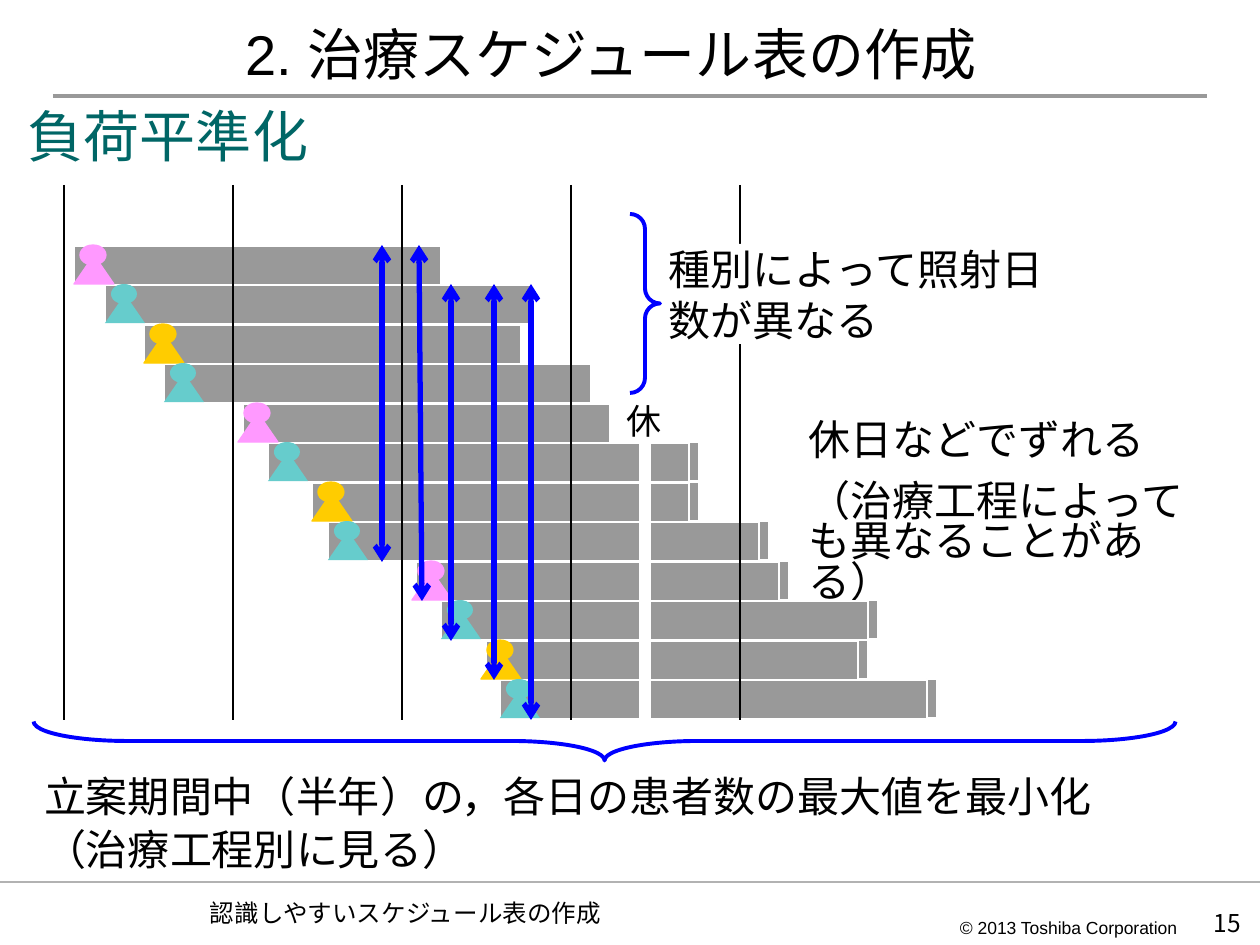
"""Build the treatment schedule slide on load levelling."""
from lxml import etree
from pptx import Presentation
from pptx.dml.color import RGBColor
from pptx.enum.shapes import MSO_CONNECTOR, MSO_SHAPE
from pptx.enum.text import MSO_ANCHOR, MSO_AUTO_SIZE, PP_ALIGN
from pptx.oxml.ns import qn
from pptx.util import Emu, Pt

RECT, OVAL = MSO_SHAPE.RECTANGLE, MSO_SHAPE.OVAL
CONE, BRACE = MSO_SHAPE.ISOSCELES_TRIANGLE, MSO_SHAPE.RIGHT_BRACE
LINE = MSO_CONNECTOR.STRAIGHT
TOP, MID = MSO_ANCHOR.TOP, MSO_ANCHOR.MIDDLE
LEFT, CENTER, RIGHT = PP_ALIGN.LEFT, PP_ALIGN.CENTER, PP_ALIGN.RIGHT
FIXED = MSO_AUTO_SIZE.NONE
SCALE = 914400 / 126
COLORS = {
    "black": "000000", "white": "FFFFFF", "gray": "999999", "pale": "B2B2B2",
    "blue": "0000FF", "green": "006666", "pink": "FF99FF", "teal": "66CCCC",
    "gold": "FFCC00",
}
BARS = [
    (74, 367, "pink", 74, None), (105, 427, "teal", 105, None),
    (144, 377, "gold", 144, None), (164, 427, "teal", 164, None),
    (243, 367, "pink", 238, None), (268, 427, "teal", 268, 689),
    (312, 377, "gold", 312, 689), (328, 432, "teal", 328, 759),
    (416, 367, "pink", 412, 779), (441, 427, "teal", 441, 868),
    (486, 377, "gold", 481, 858), (500, 432, "teal", 500, 927),
]
ARROWS = [(382, 382, 0, 8), (419, 422, 0, 9), (451, 451, 1, 10),
          (494, 494, 1, 11), (531, 531, 1, 12)]


def px(*sizes):
    return [Emu(round(size * SCALE)) for size in sizes]


def tint(name):
    return RGBColor.from_string(COLORS[name])


def row(index):
    return 246 + index * 79 // 2


def write(frame, text, font="Times New Roman", size=24, color="black",
          align=LEFT, anchor=TOP, inset=(0, 0), wrap=True, gap=12,
          lead=(1, 1), plain=False):
    frame.auto_size = FIXED
    frame.word_wrap = wrap
    frame.vertical_anchor = anchor
    frame.margin_left, frame.margin_top = px(*inset)
    frame.margin_right, frame.margin_bottom = px(*inset)
    for index, part in enumerate(text.split("\n")):
        para = frame.add_paragraph() if index else frame.paragraphs[0]
        if plain:
            props = para._p.get_or_add_pPr()
            props.set("marL", "0")
            props.set("indent", "0")
            etree.SubElement(props, qn("a:buNone"))
        para.alignment = align
        para.line_spacing = lead[index]
        para.space_before = Pt(gap if index else 0)
        run = para.add_run()
        run.text = part
        run.font.name, run.font.size = font, Pt(size)
        run.font.color.rgb = tint(color)


class Board:
    """Hold the style and the current slide."""

    def __init__(self, slide):
        self.slide = slide
        self.shapes = slide.shapes

    def holder(self, index, box, text, **style):
        item = self.slide.placeholders[index]
        item.left, item.top, item.width, item.height = px(*box)
        write(item.text_frame, text, **style)

    def label(self, box, text, **style):
        item = self.shapes.add_textbox(*px(*box))
        write(item.text_frame, text, **style)

    def shape(self, kind, box, fill=None, edge=None, width=0.75, home=None):
        item = (home or self.shapes).add_shape(kind, *px(*box))
        item.shadow.inherit = False
        if fill:
            item.fill.solid()
            item.fill.fore_color.rgb = tint(fill)
        else:
            item.fill.background()
        if edge:
            item.line.color.rgb = tint(edge)
            item.line.width = Pt(width)
        else:
            item.line.fill.background()
        return item

    def line(self, start, end, color="black", width=0.75, heads=False):
        item = self.shapes.add_connector(LINE, *px(*start, *end))
        item.line.color.rgb = tint(color)
        item.line.width = Pt(width)
        etree.SubElement(item._element.spPr, qn("a:effectLst"))
        if heads:
            for tag in ("a:headEnd", "a:tailEnd"):
                etree.SubElement(item.line._ln, qn(tag), type="arrow")

    def bar(self, left, top, width):
        self.shape(RECT, (left, top, width, 39), "gray", "white")

    def person(self, left, top, color):
        home = self.shapes.add_group_shape().shapes
        edge = None if color == "teal" else color
        self.shape(OVAL, (left + 6, top, 26, 20), color, edge, home=home)
        self.shape(CONE, (left, top + 10, 40, 29), color, edge, home=home)

    def brace(self, box, curve, turn=0):
        item = self.shape(BRACE, box, edge="blue", width=2.25)
        item.adjustments[0] = curve
        item.rotation = turn


def main():
    deck = Presentation()
    deck.slide_width, deck.slide_height = px(1260, 945)
    slide = deck.slides.add_slide(deck.slide_layouts[3])
    board = Board(slide)

    board.holder(0, (105, 26, 1012, 59), "2. 治療スケジュール表の作成",
                 font="Arial", size=32, align=CENTER, inset=(0, 6), lead=(0.8,))
    board.holder(1, (809, 413, 397, 159),
                 "休日などでずれる\n（治療工程によっても異なることがある）",
                 lead=(1, 0.8), plain=True)
    board.holder(2, (44, 770, 1131, 110),
                 "立案期間中（半年）の，各日の患者数の最大値を最小化\n（治療工程別に見る）",
                 lead=(1, 0.6), plain=True)
    board.line((0, 882), (1260, 882), "pale", 1)
    board.line((53, 96), (1207, 96), "gray", 2.25)
    board.label((960, 917, 221, 21), "© 2013 Toshiba Corporation",
                font="Arial", size=10, anchor=MID, wrap=False)
    board.label((1162, 902, 79, 42), "15", font="Noto Sans CJK JP", size=14,
                align=RIGHT, anchor=MID)
    board.label((210, 892, 725, 42), "認識しやすいスケジュール表の作成",
                font="Montserrat", size=14, anchor=MID)

    for index, (left, width, *_) in enumerate(BARS):
        board.bar(left, row(index), width)
    board.line((322, 522), (689, 522), "white")
    for index, (*_, color, left, _) in enumerate(BARS):
        board.person(left, row(index) - 1, color)
    board.shape(RECT, (640, 442, 10, 277), "white", "white")
    for index, (*_, tail) in enumerate(BARS):
        if tail:
            board.bar(tail, row(index) - 1, 10)

    board.brace((630, 214, 30, 179), 0.5)
    board.brace((585, 170, 39, 1142), 2.4, 90)
    for index in range(5):
        left = 64 + index * 169
        board.line((left, 185), (left, 720))
    note = board.shape(RECT, (669, 244, 377, 100), "white")
    write(note.text_frame, "種別によって照射日数が異なる")
    for left, right, first, last in ARROWS:
        board.line((left, row(first) - 1), (right, row(last)), "blue", 3, True)
    board.label((620, 393, 49, 54), "休", font="Arial", size=20,
                align=CENTER, inset=(6, 6))
    board.label((15, 96, 319, 81), "負荷平準化", size=32, color="green",
                inset=(13, 6))
    deck.save("out.pptx")


if __name__ == "__main__":
    main()
